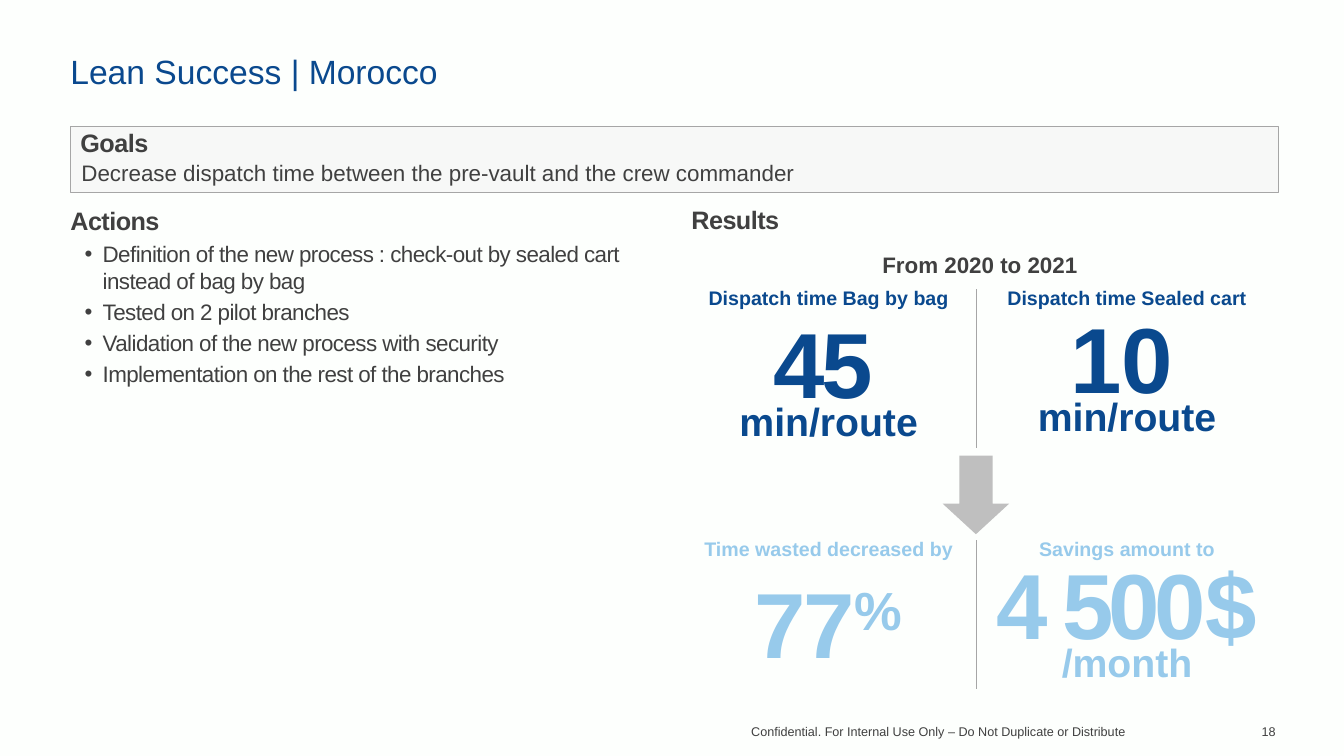
"""Build the Lean Success results slide for Morocco."""
from dataclasses import dataclass
from typing import Any, NamedTuple

from lxml import etree
from pptx import Presentation
from pptx.dml.color import RGBColor
from pptx.enum.shapes import MSO_SHAPE
from pptx.enum.text import MSO_ANCHOR, PP_ALIGN
from pptx.oxml.ns import qn
from pptx.util import Inches, Pt

LEFT, MID, RIGHT = PP_ALIGN.LEFT, PP_ALIGN.CENTER, PP_ALIGN.RIGHT
TOP, CORE, BASE = MSO_ANCHOR.TOP, MSO_ANCHOR.MIDDLE, MSO_ANCHOR.BOTTOM
RECT, DOWN = MSO_SHAPE.RECTANGLE, MSO_SHAPE.DOWN_ARROW
WIDE, HIGH = Inches(13.33), Inches(7.5)
FONT = "Arial"
PLAIN = "{2D5ABB26-0587-4C30-8999-92F81FD0307C}"
HUES = {
    "page": "FDFFFD", "text": "404040", "navy": "0A498E", "sky": "97CAEB",
    "panel": "F2F2F2", "rule": "A6A6A6", "arrow": "BFBFBF",
}


class Box(NamedTuple):
    """Left, top, width and height in percent of the slide."""
    x: float
    y: float
    w: float
    h: float

    def emu(self) -> tuple[int, int, int, int]:
        return across(self.x), down(self.y), across(self.w), down(self.h)


@dataclass
class Run:
    text: str
    size: float
    hue: str = "text"
    bold: bool = False
    track: float = 0
    rise: int = 0


@dataclass
class Para:
    runs: list[Run]
    align: Any = LEFT
    line: Any = 1.0
    after: float = 0
    left: float = 0
    hang: float = 0
    mark: str = ""


@dataclass
class Block:
    box: Box
    paras: list[Para]
    pads: tuple[float, ...] = (0.1, 0.05, 0.1, 0.05)
    anchor: Any = TOP


@dataclass
class Cell:
    paras: list[Para]
    pads: tuple[float, ...] = (0, 0, 0, 0)
    anchor: Any = TOP
    span: int = 1


@dataclass
class Grid:
    box: Box
    rows: list[float]
    cells: list[list[Cell]]


def across(share: float) -> int:
    return round(WIDE * share / 100)


def down(share: float) -> int:
    return round(HIGH * share / 100)


def tint(hue: str) -> RGBColor:
    return RGBColor.from_string(HUES[hue])


def put(para: Any, text: str, *, size: float, hue: str = "text",
        bold: bool = False, track: float = 0, rise: int = 0) -> None:
    run = para.add_run()
    run.text = text
    font = run.font
    font.name, font.size, font.bold = FONT, Pt(size), bold
    font.color.rgb = tint(hue)
    attrs = run._r.get_or_add_rPr()
    attrs.set("spc", str(round(track * 100)))
    if rise:
        attrs.set("baseline", str(rise * 1000))


def write(frame: Any, paras: list[Para]) -> None:
    for i, item in enumerate(paras):
        para = frame.add_paragraph() if i else frame.paragraphs[0]
        attrs = para._p.get_or_add_pPr()
        attrs.set("marL", str(Inches(item.left)))
        attrs.set("indent", str(Inches(item.hang)))
        if item.mark:
            paint = etree.SubElement(attrs, qn("a:buClr"))
            etree.SubElement(paint, qn("a:srgbClr"), val=HUES["text"])
            etree.SubElement(attrs, qn("a:buFont"), typeface=FONT)
            etree.SubElement(attrs, qn("a:buChar"), char=item.mark)
        para.alignment, para.line_spacing = item.align, item.line
        para.space_after = Pt(item.after)
        for run in item.runs:
            put(para, run.text, size=run.size, hue=run.hue, bold=run.bold,
                track=run.track, rise=run.rise)


def pad(host: Any, pads: tuple[float, ...], anchor: Any) -> None:
    (host.margin_left, host.margin_top, host.margin_right,
     host.margin_bottom) = (Inches(p) for p in pads)
    host.vertical_anchor = anchor


def fill(shape: Any, block: Block) -> None:
    frame = shape.text_frame
    frame.word_wrap = True
    pad(frame, block.pads, block.anchor)
    write(frame, block.paras)


def form(slide: Any, kind: Any, box: Box, hue: str) -> Any:
    shape = slide.shapes.add_shape(kind, *box.emu())
    shape.shadow.inherit = False
    shape.fill.solid()
    shape.fill.fore_color.rgb = tint(hue)
    shape.line.fill.background()
    return shape


def edge(cell: Any, side: str) -> None:
    line = etree.Element(qn(f"a:ln{side}"), w=str(Pt(0.5)))
    paint = etree.SubElement(line, qn("a:solidFill"))
    etree.SubElement(paint, qn("a:srgbClr"), val=HUES["rule"])
    cell._tc.get_or_add_tcPr().insert(0, line)


def chart(slide: Any, grid: Grid) -> None:
    table = slide.shapes.add_table(len(grid.rows), 2, *grid.box.emu()).table
    look = table._tbl.tblPr
    look.find(qn("a:tableStyleId")).text = PLAIN
    table.first_row = table.horz_banding = False
    for col, share in zip(table.columns, (21.9, 22.5)):
        col.width = across(share)
    for r, (share, line) in enumerate(zip(grid.rows, grid.cells)):
        table.rows[r].height = down(share)
        for c, item in enumerate(line):
            cell = table.cell(r, c)
            pad(cell, item.pads, item.anchor)
            write(cell.text_frame, item.paras)
            cell.fill.background()
            if item.span > 1:
                cell.merge(table.cell(r, c + item.span - 1))
            else:
                edge(cell, "LR"[c == 0])


def head(text: str, hue: str, size: float = 14) -> Para:
    return Para([Run(text, size, hue, True)], MID, 0.9)


def value(hue: str, unit: str, *parts: tuple, top: float = 0) -> Cell:
    runs = [Run(text, size, hue, True, *rest) for text, size, *rest in parts]
    paras = [Para(runs, MID, 0.9)]
    if unit:
        paras.append(Para([Run(unit, 28, hue, True)], MID, Pt(20)))
    return Cell(paras, (0, top, 0, 0), CORE)


def topic(text: str, line: float = 1.0) -> Para:
    return Para([Run(text, 18, bold=True, track=-0.4)], line=line, after=3)


ACTS = [
    "Definition of the new process : check-out by sealed cart instead of bag by bag",
    "Tested on 2 pilot branches",
    "Validation of the new process with security",
    "Implementation on the rest of the branches",
]
EVEN = (0.1, 0.1, 0.1, 0.1)
NOTE = "Confidential. For Internal Use Only – Do Not Duplicate or Distribute"
BLOCKS = [
    Block(Box(91.15, 95.07, 4.5, 3.33), [Para([Run("18", 9)], RIGHT)], (0, 0.05, 0.1, 0.05), BASE),
    Block(Box(4.5, 6.67, 91.15, 6.13), [Para([Run("Lean Success | Morocco", 24, "navy")], line=0.9)], anchor=BASE),
    Block(Box(49.96, 95.07, 33.76, 3.33), [Para([Run(NOTE, 9)], RIGHT)], (0, 0.05, 0, 0.05), BASE),
    Block(Box(4.5, 25.87, 44.79, 26.93), [topic("Actions")] + [
        Para([Run(act, 16, track=-0.4)], after=3, left=0.32, hang=-0.18, mark="•") for act in ACTS], EVEN),
    Block(Box(50.71, 25.73, 43.81, 6.67), [topic("Results")], EVEN),
]
GOALS = Block(Box(5.25, 16.67, 89.87, 8.8), [
    topic("Goals", 0.9),
    Para([Run("Decrease dispatch time between the pre-vault and the crew commander", 16)], line=0.9, after=3, left=0.01),
])
GRIDS = [
    Grid(Box(50.71, 33.87, 44.4, 25.73), [4.4, 2.67, 13.47], [
        [Cell([head("From 2020 to 2021", "text", 16)], (0, 0, 0, 0.05), span=2)],
        [Cell([head(f"Dispatch time {way}", "navy")]) for way in ("Bag by bag", "Sealed cart")],
        [value("navy", "min/route", ("45", 66, -2), (" ", 28, -2), top=0.1),
         value("navy", "min/route", ("1", 66, -8), ("0", 66, -2), (" ", 28, -2))],
    ]),
    Grid(Box(50.71, 71.47, 44.4, 20), [2.67, 13.47], [
        [Cell([head(text, "sky")]) for text in ("Time wasted decreased by", "Savings amount to")],
        [value("sky", "", ("77", 66, -2), ("%", 66, -2, 30), top=0.1),
         value("sky", "/month", ("4 500", 66, -4), ("$", 66, -8))],
    ]),
]


def main() -> None:
    deck = Presentation()
    deck.slide_width, deck.slide_height = WIDE, HIGH
    slide = deck.slides.add_slide(deck.slide_layouts[6])
    slide.background.fill.solid()
    slide.background.fill.fore_color.rgb = tint("page")
    panel = form(slide, RECT, GOALS.box, "panel")
    shade = panel._element.spPr.find(f"{qn('a:solidFill')}/{qn('a:srgbClr')}")
    etree.SubElement(shade, qn("a:alpha"), val="50000")
    panel.line.color.rgb, panel.line.width = tint("rule"), Pt(0.5)
    fill(panel, GOALS)
    for block in BLOCKS:
        fill(slide.shapes.add_textbox(*block.box.emu()), block)
    for grid in GRIDS:
        chart(slide, grid)
    arrow = form(slide, DOWN, Box(70.14, 60.27, 4.95, 10.4), "arrow")
    arrow.adjustments[0], arrow.adjustments[1] = 0.5, 0.46
    deck.save("out.pptx")


if __name__ == "__main__":
    main()
